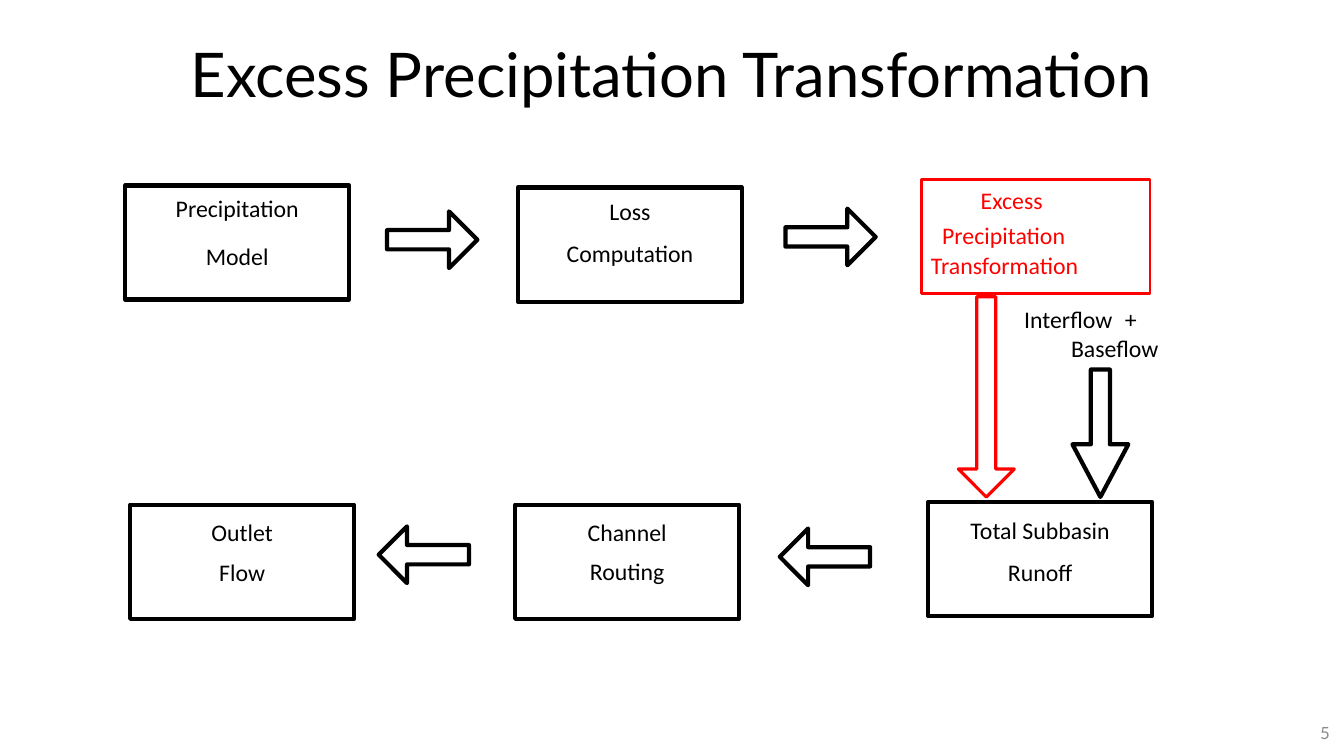
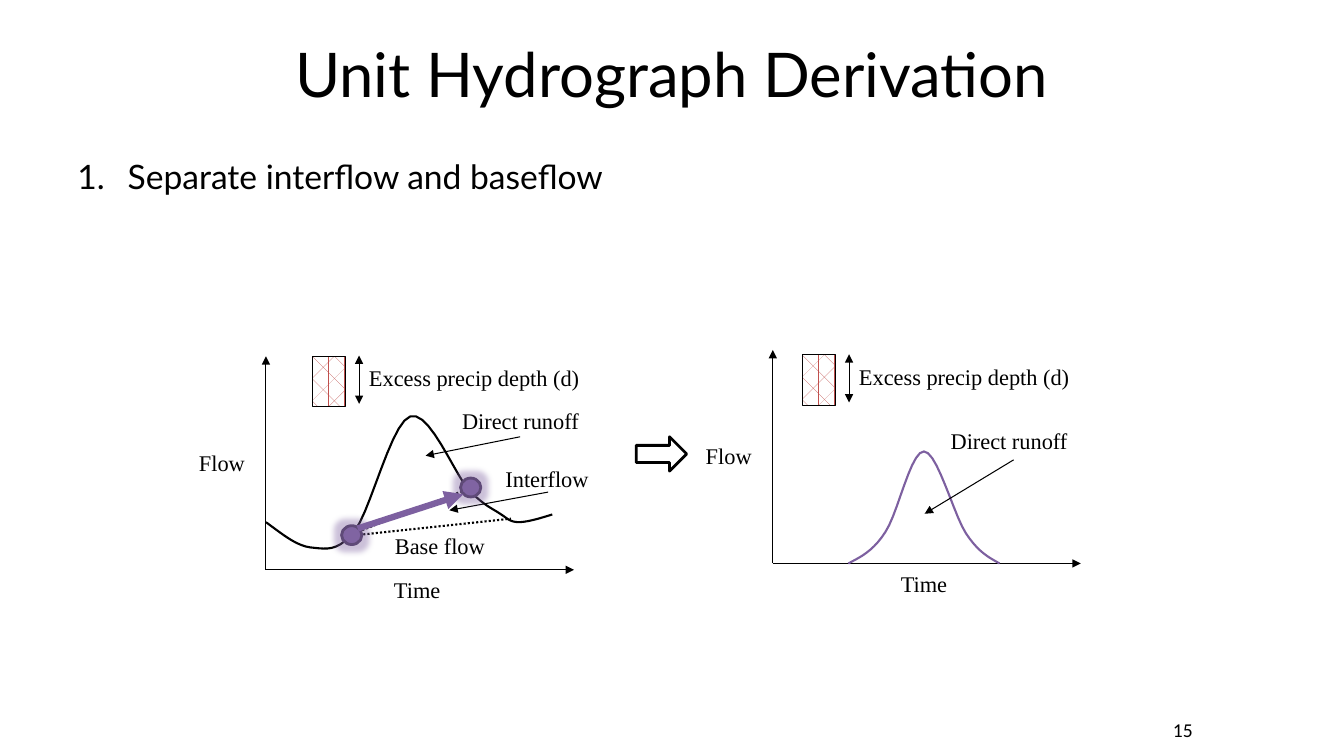
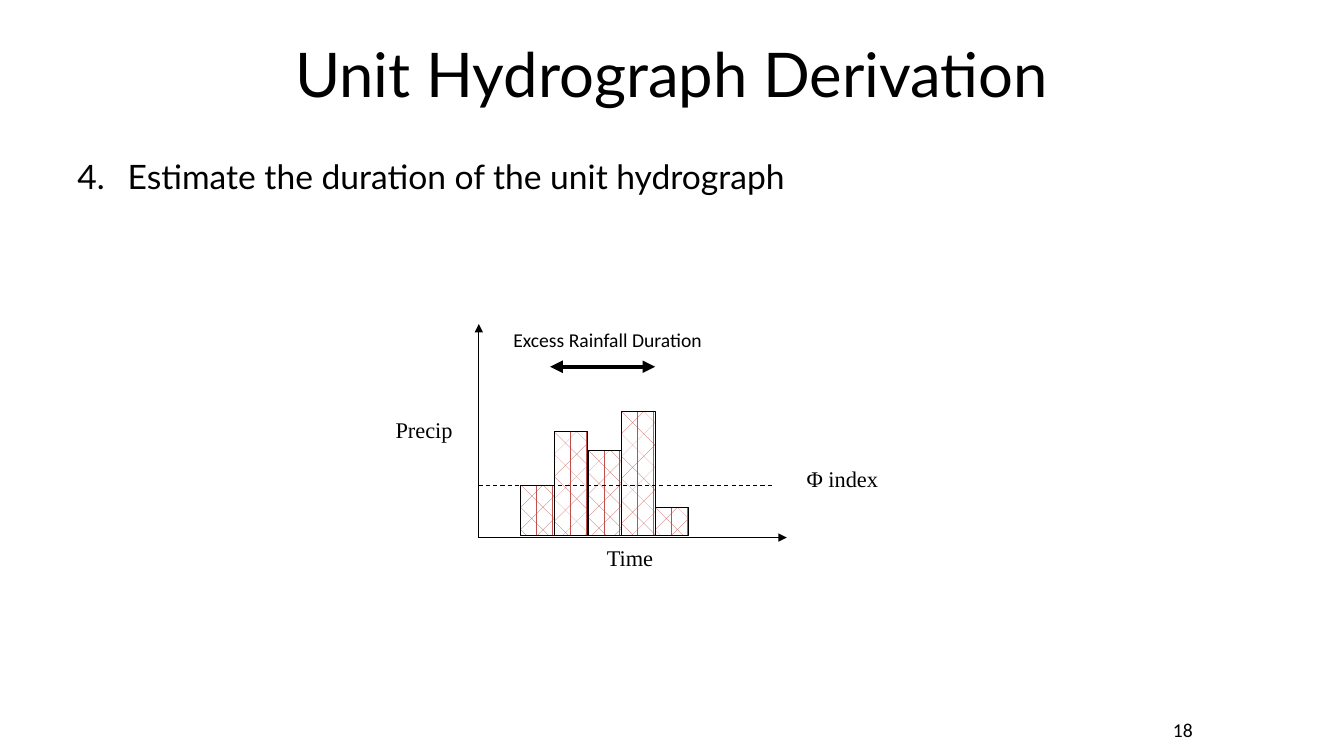
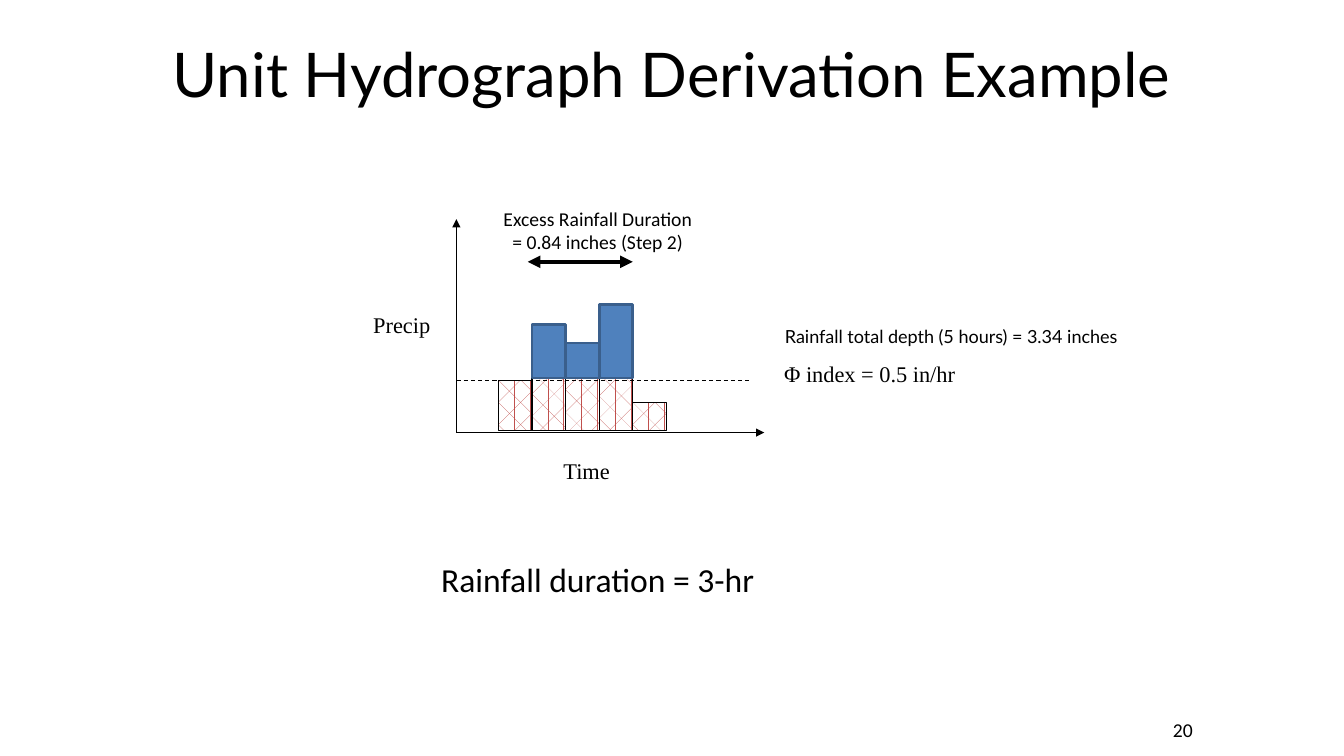
from dataclasses import dataclass

from lxml.etree import SubElement
from pptx import Presentation
from pptx.dml.color import RGBColor
from pptx.enum.dml import MSO_LINE, MSO_PATTERN
from pptx.enum.shapes import MSO_CONNECTOR, MSO_SHAPE
from pptx.enum.text import MSO_ANCHOR, MSO_AUTO_SIZE, PP_ALIGN
from pptx.oxml.ns import qn
from pptx.util import Pt


@dataclass(frozen=True)
class Theme:
    heading: str = "Lato"
    plain: str = "Calibri"
    serif: str = "Times New Roman"
    black: str = "000000"
    white: str = "FFFFFF"
    grey: str = "8C8C8C"
    red: str = "FF0000"
    hatch: str = "C0504D"
    purple: str = "8064A2"
    purple_edge: str = "5F4A78"
    purple_line: str = "7D60A0"
    blue: str = "4F81BD"
    blue_edge: str = "3A5F8C"
    title_size: float = 44
    list_size: float = 24
    flow_size: float = 17
    axis_size: float = 16
    note_size: float = 14
    detail_size: float = 12.9
    page_size: float = 12
    thin: float = 0.75
    curve: float = 1.5
    edge: float = 2
    heavy: float = 3


T = Theme()
TITLE_BOX = (48, 18, 864, 67.5)
LIST_BOX = (48, 108, 864, 390)
PAGE_BOX = (733, 509, 224, 29)
AXIS_W, AXIS_H = 220, 152.5
BAR_W, BAR_DEPTHS, PHI_DEPTH = 24, (36, 74, 61, 88.5, 20), 36


def points(*values):
    return [Pt(value) for value in values]


def rgb(code):
    return RGBColor.from_string(code)


# Basic parts
def style(paragraph, size, face=T.plain, color=T.black, align=PP_ALIGN.LEFT):
    paragraph.alignment = align
    font = paragraph.font
    font.size, font.name = Pt(size), face
    font.color.rgb = rgb(color)


def indent(paragraph, left, first=0):
    properties = paragraph._p.get_or_add_pPr()
    properties.set("marL", str(Pt(left)))
    properties.set("indent", str(Pt(first)))
    return properties


def label(slide, box, text, size=T.axis_size, face=T.serif, color=T.black,
          align=PP_ALIGN.LEFT, anchor=MSO_ANCHOR.TOP):
    frame = slide.shapes.add_textbox(*points(*box)).text_frame
    frame.word_wrap = True
    frame.vertical_anchor = anchor
    frame.text = text
    for paragraph in frame.paragraphs:
        style(paragraph, size, face, color, align)


def outline(shape, color, width):
    shape.line.color.rgb = rgb(color)
    shape.line.width = Pt(width)
    shape.shadow.inherit = False


def block(slide, kind, box, color=T.black, width=T.heavy, fill=None):
    shape = slide.shapes.add_shape(kind, *points(*box))
    if fill:
        shape.fill.solid()
        shape.fill.fore_color.rgb = rgb(fill)
    else:
        shape.fill.background()
    outline(shape, color, width)
    return shape


def line(slide, start, end, color=T.black, width=T.thin, dash=None, head=False, tail=False):
    connector = slide.shapes.add_connector(MSO_CONNECTOR.STRAIGHT, *points(*start, *end))
    connector.line.color.rgb = rgb(color)
    connector.line.width = Pt(width)
    if dash:
        connector.line.dash_style = dash
    stroke = connector.line._get_or_add_ln()
    for wanted, tag in ((head, "a:headEnd"), (tail, "a:tailEnd")):
        if wanted:
            SubElement(stroke, qn(tag), type="triangle")
    SubElement(connector._element.spPr, qn("a:effectLst"))


def curve(slide, origin, start, segments, color=T.black, steps=10):
    """Draw cubic segments, each (control, control, end), relative to origin."""
    def place(point):
        return Pt(origin[0] + point[0]), Pt(origin[1] + point[1])

    path, a = [], start
    for b, c, d in segments:
        for step in range(1, steps + 1):
            t = step / steps
            u = 1 - t
            path.append(place([u**3 * a[i] + 3 * u * u * t * b[i] + 3 * u * t * t * c[i]
                               + t**3 * d[i] for i in (0, 1)]))
        a = d
    builder = slide.shapes.build_freeform(*place(start))
    builder.add_line_segments(path, close=False)
    shape = builder.convert_to_shape()
    shape.fill.background()
    outline(shape, color, T.curve)


def hatched_bar(slide, box):
    bar = block(slide, MSO_SHAPE.RECTANGLE, box, width=T.thin)
    bar.fill.patterned()
    bar.fill.pattern = MSO_PATTERN.DIVOT
    bar.fill.fore_color.rgb = rgb(T.hatch)
    bar.fill.back_color.rgb = rgb(T.white)


# Shared slide frame
def place_text(placeholder, box, text):
    placeholder.left, placeholder.top, placeholder.width, placeholder.height = points(*box)
    frame = placeholder.text_frame
    frame.text = text
    frame.auto_size = MSO_AUTO_SIZE.NONE
    return frame


def new_slide(prs, layout, title):
    slide = prs.slides.add_slide(prs.slide_layouts[layout])
    frame = place_text(slide.shapes.title, TITLE_BOX, title)
    frame.vertical_anchor = MSO_ANCHOR.MIDDLE
    style(frame.paragraphs[0], T.title_size, T.heading, align=PP_ALIGN.CENTER)
    return slide


def page_number(slide, number):
    label(slide, PAGE_BOX, number, T.note_size, T.plain, align=PP_ALIGN.CENTER)


def body_line(slide, box, text, size, number=None):
    paragraph = place_text(slide.placeholders[1], box, text).paragraphs[0]
    paragraph.space_before = Pt(0)
    if number:
        SubElement(indent(paragraph, 36, -36), qn("a:buAutoNum"),
                   type="arabicPeriod", startAt=str(number))
    else:
        SubElement(indent(paragraph, 0), qn("a:buNone"))
    style(paragraph, size, T.heading)


# Process flow
def flow_step(slide, box, top, lines, color=T.black, width=T.heavy, align=PP_ALIGN.CENTER):
    """Each line is (text, space before, left indent)."""
    frame = block(slide, MSO_SHAPE.RECTANGLE, box, color, width).text_frame
    frame.vertical_anchor = MSO_ANCHOR.TOP
    frame.margin_left = frame.margin_right = frame.margin_bottom = 0
    frame.margin_top = Pt(top)
    frame.text = "\n".join(text for text, _, _ in lines)
    for paragraph, (_, gap, left) in zip(frame.paragraphs, lines):
        indent(paragraph, left)
        paragraph.space_before = Pt(gap)
        style(paragraph, T.flow_size, color=color, align=align)


def flow_arrow(slide, kind, box, head=0.5, color=T.black, width=T.heavy):
    arrow = block(slide, kind, box, color, width)
    arrow.adjustments[0], arrow.adjustments[1] = 0.34, head


def inflow_note(slide, box):
    frame = slide.shapes.add_textbox(*points(*box)).text_frame
    frame.word_wrap = True
    frame.margin_left = frame.margin_right = frame.margin_top = frame.margin_bottom = 0
    frame.text = "Interflow\t+\nBaseflow"
    interflow, baseflow = frame.paragraphs
    stops = SubElement(indent(interflow, 0), qn("a:tabLst"))
    SubElement(stops, qn("a:tab"), pos=str(Pt(79)), algn="l")
    indent(baseflow, 33.5)
    for paragraph in frame.paragraphs:
        style(paragraph, T.flow_size)


def transformation_slide(prs):
    slide = new_slide(prs, 5, "Excess Precipitation Transformation")
    label(slide, PAGE_BOX, "5", T.page_size, T.heading, T.grey,
          PP_ALIGN.RIGHT, MSO_ANCHOR.MIDDLE)
    steps = (
        (89.5, 132.5, 6, "Precipitation", "Model", 14),
        (370, 134, 6.5, "Loss", "Computation", 9.5),
        (663, 358.5, 10, "Total Subbasin", "Runoff", 9.5),
        (368, 360.5, 9.5, "Channel", "Routing", 7.5),
        (93, 360.5, 9.5, "Outlet", "Flow", 8),
    )
    for x, y, top, first, second, gap in steps:
        flow_step(slide, (x, y, 160, 81.5), top, [(first, 0, 0), (second, gap, 0)])
    flow_step(slide, (658, 128, 163.5, 81.5), 4.5,
              [("Excess", 0, 42.5), ("Precipitation", 4.5, 15), ("Transformation", 1.5, 7)],
              T.red, T.edge, PP_ALIGN.LEFT)
    inflow_note(slide, (731.5, 218, 112, 52))
    for kind, x, y in ((MSO_SHAPE.RIGHT_ARROW, 276.5, 151), (MSO_SHAPE.RIGHT_ARROW, 561, 149),
                       (MSO_SHAPE.LEFT_ARROW, 557, 377.5), (MSO_SHAPE.LEFT_ARROW, 270.5, 376)):
        flow_arrow(slide, kind, (x, y, 64.5, 40.5))
    flow_arrow(slide, MSO_SHAPE.DOWN_ARROW, (684.5, 212, 40, 143), 0.5, T.red, 2.25)
    flow_arrow(slide, MSO_SHAPE.DOWN_ARROW, (766, 264, 40, 91), 0.94)


# Graphs: every part is placed from the point where the axes meet
def axes(slide, origin, quantity, quantity_w, time_at=(51, 1)):
    x, y = origin
    line(slide, origin, (x, y - AXIS_H), tail=True)
    line(slide, origin, (x + AXIS_W, y), tail=True)
    label(slide, (x + time_at[0], y + time_at[1], 114, 26.5), "Time", align=PP_ALIGN.CENTER)
    label(slide, (x - quantity_w - 6, y - 90, quantity_w, 26.5), quantity)


def excess_depth(slide, x, y):
    hatched_bar(slide, (x, y, BAR_W, 36))
    arrow_x = x + 33.5
    line(slide, (arrow_x, y - 0.5), (arrow_x, y + 34), head=True, tail=True)
    label(slide, (arrow_x, y + 2, 177, 26.5), "Excess precip depth (d)")


def callout(slide, origin, text, text_at, start, end):
    x, y = origin
    label(slide, (x + text_at[0], y + text_at[1], 114, 26.5), text)
    line(slide, (x + start[0], y + start[1]), (x + end[0], y + end[1]), tail=True)


def turning_point(slide, x, y):
    marker = block(slide, MSO_SHAPE.OVAL, (x, y, 14.5, 13.5), T.purple_edge, T.edge, T.purple)
    effects = marker._element.spPr.find(qn("a:effectLst"))
    glow = SubElement(effects, qn("a:glow"), rad=str(Pt(8)))
    color = SubElement(glow, qn("a:srgbClr"), val=T.purple)
    SubElement(color, qn("a:alpha"), val="40000")


def total_hydrograph(slide, origin):
    x, y = origin
    axes(slide, origin, "Flow", 49)
    excess_depth(slide, x + 33, y - AXIS_H)
    curve(slide, origin, (0, -34), [
        ((11, -26), (21, -17.5), (31.5, -16)),
        ((42.5, -15), (51, -12), (63.5, -28)),
        ((75, -43), (89.5, -105), (103, -109.5)),
        ((116.5, -114.5), (134.5, -69), (144.5, -57.5)),
        ((155.5, -46), (160.5, -44.5), (166.5, -40.5)),
        ((173, -36.5), (173.5, -34.5), (180, -34)),
        ((186.5, -34), (195, -36.5), (204.5, -39.5)),
    ])
    for end in ((147.5, -59), (175, -36.5)):
        line(slide, (x + 57.5, y - 24), (x + end[0], y + end[1]),
             width=T.curve, dash=MSO_LINE.ROUND_DOT)
    label(slide, (x + 85, y - 30.5, 90, 26.5), "Base flow")
    callout(slide, origin, "Direct runoff", (133, -119.5), (181.5, -95), (114, -81.5))
    callout(slide, origin, "Interflow", (164, -78.5), (201.5, -55.5), (131, -42.5))
    turning_point(slide, x + 54, y - 31.5)
    turning_point(slide, x + 139, y - 65.5)
    line(slide, (x + 65.5, y - 29.5), (x + 141, y - 54), T.purple_line, 4.5, tail=True)


def direct_hydrograph(slide, origin):
    x, y = origin
    axes(slide, origin, "Flow", 49)
    excess_depth(slide, x + 21, y - 149)
    curve(slide, origin, (54, 0), [
        ((62.5, -4.5), (71.5, -8.5), (80.5, -22.5)),
        ((89.5, -36), (98.5, -80), (108, -80)),
        ((117.5, -80), (129, -35.5), (138, -21.5)),
        ((147, -8), (154, -4.5), (162, 0)),
    ], T.purple_line)
    callout(slide, origin, "Direct runoff", (120, -101), (172, -74), (108.5, -35.5))


def hyetograph(slide, origin, duration, duration_at, phi, time_at=(51, 1), excess=()):
    """Rain bars with the Φ line; excess lists the bars filled above it."""
    x, y = origin
    axes(slide, origin, "Precip", 60.5, time_at)
    bars_x, base = x + 30, y - 1.5
    for i, depth in enumerate(BAR_DEPTHS):
        hatched_bar(slide, (bars_x + i * BAR_W, base - depth, BAR_W, depth))
    phi_y = base - PHI_DEPTH
    line(slide, (x, phi_y), (x + 210, phi_y), dash=MSO_LINE.DASH)
    label(slide, (x + 227, y - 55.5, 142, 26.5), phi)
    line(slide, (x + 51, y - 122), (x + 126, y - 122), width=T.heavy, head=True, tail=True)
    label(slide, (x + duration_at[0], y + duration_at[1], 150, 41), duration,
          T.note_size, T.plain, align=PP_ALIGN.CENTER)
    for i in excess:
        depth = BAR_DEPTHS[i] - PHI_DEPTH
        block(slide, MSO_SHAPE.RECTANGLE,
              (bars_x + i * BAR_W, phi_y - 1.5 - depth, BAR_W, depth),
              T.blue_edge, T.edge, T.blue)


# Derivation slides
def derivation_step(prs, page, number, text):
    slide = new_slide(prs, 1, "Unit Hydrograph Derivation")
    body_line(slide, LIST_BOX, text, T.list_size, number)
    page_number(slide, page)
    return slide


def separation_slide(prs):
    slide = derivation_step(prs, "15", 1, "Separate interflow and baseflow")
    total_hydrograph(slide, (190, 407))
    block(slide, MSO_SHAPE.RIGHT_ARROW, (454.5, 312, 36, 24.5), width=T.edge, fill=T.white)
    direct_hydrograph(slide, (552, 402.5))


def duration_slide(prs):
    slide = derivation_step(prs, "18", 4, "Estimate the duration of the unit hydrograph")
    hyetograph(slide, (342, 384), "Excess Rainfall Duration", (17, -153.5), "Φ index")


def example_slide(prs):
    slide = new_slide(prs, 1, "Unit Hydrograph Derivation Example")
    body_line(slide, (553.5, 229, 281.5, 21.5),
              "Rainfall total depth (5 hours) = 3.34 inches", T.detail_size)
    page_number(slide, "20")
    hyetograph(slide, (326, 309), "Excess Rainfall Duration\n= 0.84 inches (Step 2)",
               (26, -165), "Φ index = 0.5 in/hr", (36, 14), excess=(1, 2, 3))
    label(slide, (308, 396, 300, 36), "Rainfall duration = 3-hr", T.list_size, T.plain)


def main():
    prs = Presentation()
    prs.slide_width, prs.slide_height = points(960, 540)
    transformation_slide(prs)
    separation_slide(prs)
    duration_slide(prs)
    example_slide(prs)
    prs.save("out.pptx")


if __name__ == "__main__":
    main()
